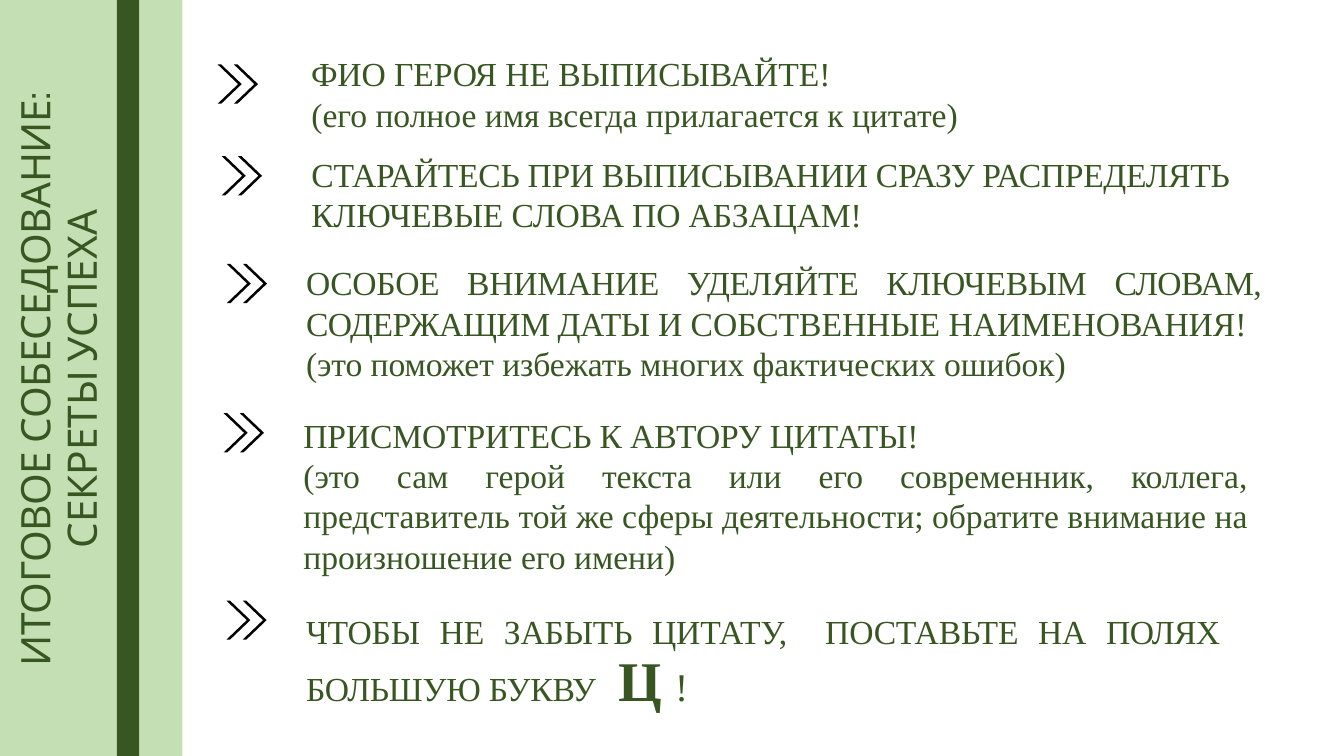
from dataclasses import dataclass

from pptx import Presentation
from pptx.dml.color import RGBColor
from pptx.enum.shapes import MSO_SHAPE as Preset
from pptx.enum.text import MSO_ANCHOR as Anchor, PP_ALIGN as Align
from pptx.util import Pt

LIGHT_GREEN, DARK_GREEN, BLACK = "C5DFB4", "385622", "000000"
SERIF, SANS = "Times New Roman", "Cabin"


@dataclass
class Band:
    left: float
    width: float
    color: str


@dataclass
class Piece:
    text: str
    spacing: float = 0
    size: float = 24
    bold: bool = False
    font: str = SERIF


@dataclass
class Line:
    pieces: list[Piece]
    indent: float = 0
    right_indent: float = 0
    before: float = 0
    spacing: float | None = None
    align: Align = Align.LEFT


def rgb(color: str) -> RGBColor:
    return RGBColor.from_string(color)


def paint(shape, color: str) -> None:
    shape.fill.solid()
    shape.fill.fore_color.rgb = rgb(color)
    shape.line.fill.background()
    shape.shadow.inherit = False


def draw_band(slide, band: Band) -> None:
    shape = slide.shapes.add_shape(
        Preset.RECTANGLE, Pt(band.left), Pt(0), Pt(band.width), Pt(540))
    paint(shape, band.color)


def draw_chevrons(slide, left: float, top: float) -> None:
    """Two thin arrowheads side by side in one outline."""
    outline = ((0, 0), (2.6, 0), (17.2, 14), (2.6, 28), (0, 28), (14.6, 14))
    builder = None
    for shift in (0, 11.6):
        points = [(Pt(left + shift + x), Pt(top + y)) for x, y in outline]
        if builder is None:
            builder = slide.shapes.build_freeform(*points[0])
        else:
            builder.move_to(*points[0])
        builder.add_line_segments(points[1:], close=True)
    paint(builder.convert_to_shape(), BLACK)


def fill_paragraph(paragraph, line: Line) -> None:
    paragraph.alignment = line.align
    if line.before:
        paragraph.space_before = Pt(line.before)
    if line.spacing:
        paragraph.line_spacing = Pt(line.spacing)
    properties = paragraph._p.get_or_add_pPr()
    properties.set("marL", str(Pt(line.indent)))
    properties.set("marR", str(Pt(line.right_indent)))
    for piece in line.pieces:
        run = paragraph.add_run()
        run.text = piece.text
        run.font.name = piece.font
        run.font.size = Pt(piece.size)
        run.font.bold = piece.bold
        run.font.color.rgb = rgb(DARK_GREEN)
        run._r.get_or_add_rPr().set("spc", str(round(piece.spacing * 100)))


def draw_text(slide, left: float, top: float, width: float, height: float,
              lines: list[Line], direction: str = "horz") -> None:
    box = slide.shapes.add_textbox(Pt(left), Pt(top), Pt(width), Pt(height))
    frame = box.text_frame
    frame.word_wrap = True
    frame.vertical_anchor = Anchor.TOP
    frame.margin_left = frame.margin_right = Pt(0)
    frame.margin_top = frame.margin_bottom = Pt(0)
    frame._txBody.bodyPr.set("vert", direction)
    for index, line in enumerate(lines):
        paragraph = frame.add_paragraph() if index else frame.paragraphs[0]
        fill_paragraph(paragraph, line)


BANDS = [
    Band(0, 83.5, LIGHT_GREEN),
    Band(99.4, 30.9, LIGHT_GREEN),
    Band(83.5, 15.9, DARK_GREEN),
]

CHEVRONS = [(155.5, 46.1), (158.4, 111.6), (162, 188.6), (159.8, 295.2), (161.7, 429)]

SIDE_TITLE = [
    Line([Piece(text, spacing, 29, font=SANS)], spacing=33.2, align=Align.CENTER)
    for text, spacing in (("ИТОГОВОЕ СОБЕСЕДОВАНИЕ:", -0.3), ("СЕКРЕТЫ УСПЕХА", -0.1))
]

FIRST_TIP = [Line([Piece("ФИО ГЕРОЯ НЕ ВЫПИСЫВАЙТЕ!", -0.05)], indent=1.2)]

TIPS = [
    Line([Piece("(его полное имя всегда прилагается к цитате)", -0.03)], indent=6.5),
    Line([Piece("СТАРАЙТЕСЬ ПРИ ВЫПИСЫВАНИИ СРАЗУ РАСПРЕДЕЛЯТЬ ", -0.23),
          Piece("КЛЮЧЕВЫЕ СЛОВА ПО АБЗАЦАМ!", -0.1)], indent=6.5, before=13.9),
    Line([Piece("ОСОБОЕ ВНИМАНИЕ УДЕЛЯЙТЕ КЛЮЧЕВЫМ ", -0.2),
          Piece("СЛОВАМ, ", -0.5),
          Piece("СОДЕРЖАЩИМ ДАТЫ ", -0.35),
          Piece("И СОБСТВЕННЫЕ НАИМЕНОВАНИЯ!", -0.03)],
         indent=2.6, right_indent=1.5, before=19.9, align=Align.JUSTIFY),
    Line([Piece("(это поможет избежать многих фактических ошибок)", -0.05)],
         indent=2.6, before=0.1),
    Line([Piece("ПРИСМОТРИТЕСЬ К АВТОРУ ЦИТАТЫ!", -0.1)], indent=0.7, before=22.4),
    Line([Piece("(это сам герой текста или его современник, коллега, "
                "представитель той же сферы деятельности; обратите внимание "
                "на произношение его имени)")],
         indent=0.7, right_indent=10.8, align=Align.JUSTIFY),
    Line([Piece("ЧТОБЫ НЕ ЗАБЫТЬ ЦИТАТУ,", -0.1),
          Piece(" ", 13),
          Piece("ПОСТАВЬТЕ НА ", -0.1),
          Piece("ПОЛЯХ ", -0.4),
          Piece("БОЛЬШУЮ БУКВУ", -0.15),
          Piece(" ", 10),
          Piece("Ц ", -0.4, 40, True),
          Piece("!", -0.5, 28)],
         indent=2.6, right_indent=31, before=9.2, spacing=44.3,
         align=Align.JUSTIFY),
]


def main() -> None:
    presentation = Presentation()
    presentation.slide_width, presentation.slide_height = Pt(960), Pt(540)
    slide = presentation.slides.add_slide(presentation.slide_layouts[6])

    # Side strip with its vertical title
    for band in BANDS:
        draw_band(slide, band)
    draw_text(slide, 8.6, 51.8, 69.8, 437.8, SIDE_TITLE, "vert270")

    # Tips
    draw_text(slide, 221, 37.6, 374.4, 30.8, FIRST_TIP)
    draw_text(slide, 216, 67, 686.2, 442, TIPS)

    # Chevron markers
    for left, top in CHEVRONS:
        draw_chevrons(slide, left, top)

    presentation.save("out.pptx")


if __name__ == "__main__":
    main()
